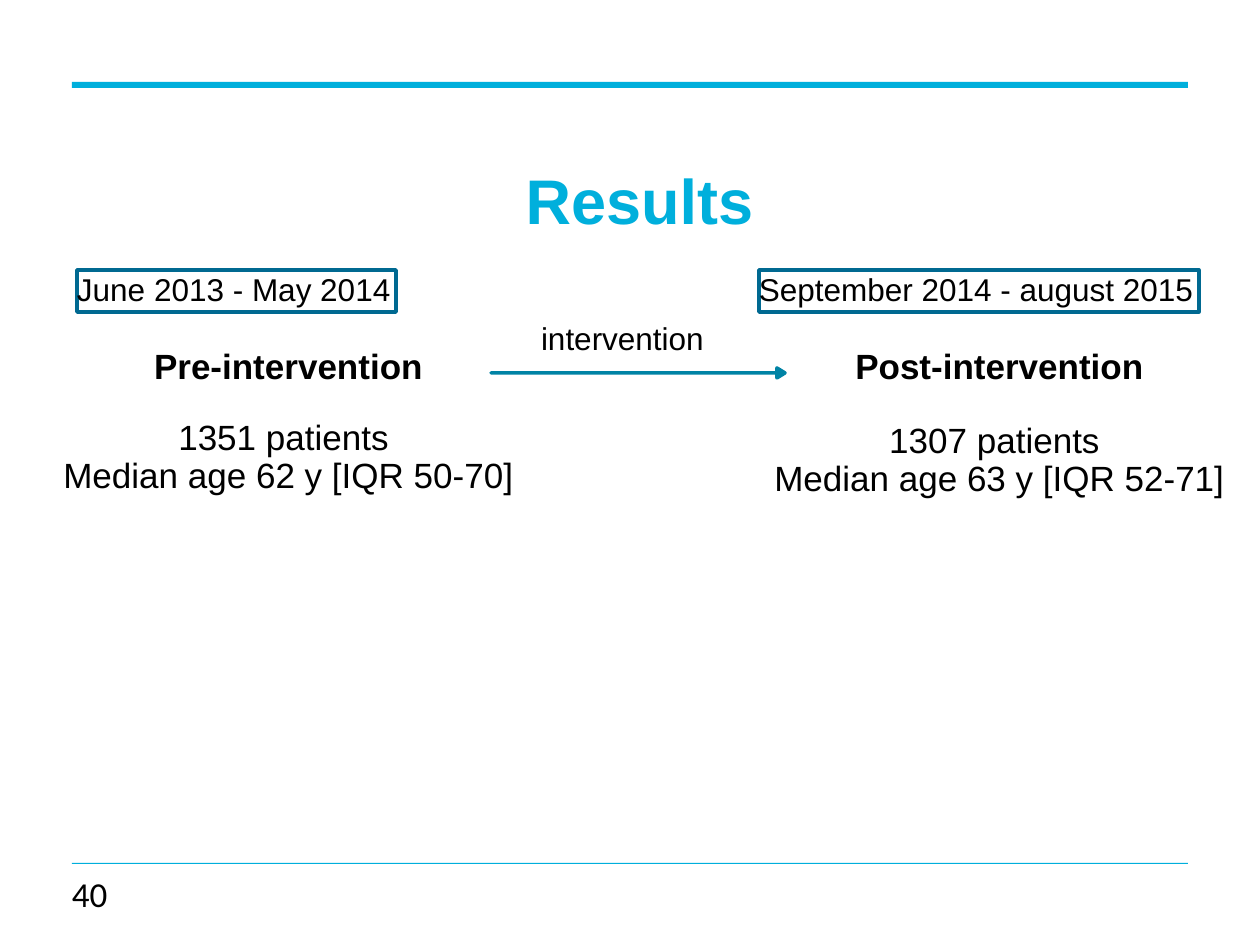
from pptx import Presentation
from pptx.dml.color import RGBColor
from pptx.enum.shapes import MSO_SHAPE
from pptx.enum.text import MSO_ANCHOR, PP_ALIGN
from pptx.util import Emu, Pt

COLORS = {"rule": "00AFDC", "arrow": "0083A5", "frame": "006991", "text": "000000"}
PX = 914400 / 126

RULES = [(72, 82, 1116, 6), (72, 863, 1116, 1)]
TITLE = ("Results", (91, 139, 1097, 131))
PERIODS = [
    ("September 2014 - august 2015", (759, 270, 440, 42)),
    ("June 2013 - May 2014", (77, 270, 319, 42)),
]
GROUPS = [
    ("Pre-intervention", ["1351 patients ", "Median age 62 y [IQR 50-70]"],
     (10, 349, 557, 348), 19),
    ("Post-intervention", ["1307 patients ", "Median age 63 y [IQR 52-71]"],
     (721, 349, 557, 149), 21),
]
ARROW = (491, 368, 294, 10)
ARROW_LABEL = ("intervention", (541, 319, 170, 39))
PAGE = ("40", (72, 852, 79, 84))


def color(name):
    return RGBColor.from_string(COLORS[name])


def place(box):
    return [Emu(round(v * PX)) for v in box]


def add_block(kind, box, fill=None, line=None):
    block = slide.shapes.add_shape(kind, *place(box))
    block.shadow.inherit = False
    if fill:
        block.fill.solid()
        block.fill.fore_color.rgb = color(fill)
    else:
        block.fill.background()
    if line:
        block.line.color.rgb = color(line)
        block.line.width = Pt(2)
    else:
        block.line.fill.background()
    return block


def write(holder, lines, size, tone="text", bold=False, font="Arial",
          align=PP_ALIGN.LEFT, anchor=MSO_ANCHOR.TOP, spacing=None):
    frame = holder.text_frame
    frame.word_wrap = True
    frame.margin_left = frame.margin_right = frame.margin_top = frame.margin_bottom = 0
    frame.vertical_anchor = anchor
    frame.text = "\n".join(lines)
    for paragraph in frame.paragraphs:
        paragraph.alignment = align
        paragraph.line_spacing = spacing
        paragraph.font.name = font
        paragraph.font.size = Pt(size)
        paragraph.font.bold = bold
        paragraph.font.color.rgb = color(tone)
    return frame.paragraphs


def add_text(box, lines, size, **style):
    return write(slide.shapes.add_textbox(*place(box)), lines, size, **style)


deck = Presentation()
deck.slide_width, deck.slide_height = place((1260, 945))
slide = deck.slides.add_slide(deck.slide_layouts[6])

for rule in RULES:
    add_block(MSO_SHAPE.RECTANGLE, rule, fill="rule")

title, title_box = TITLE
add_text(title_box, [title], 36, tone="rule", bold=True, align=PP_ALIGN.CENTER,
         anchor=MSO_ANCHOR.MIDDLE, spacing=Pt(37))

for heading, facts, box, gap in GROUPS:
    paragraphs = add_text(box, [heading, *facts], 20, align=PP_ALIGN.CENTER, spacing=0.9)
    paragraphs[0].font.bold = True
    paragraphs[1].space_before = Pt(gap)

arrow = add_block(MSO_SHAPE.RIGHT_ARROW, ARROW, fill="arrow", line="arrow")
arrow.adjustments[0] = 0
arrow.adjustments[1] = 0.81

for period, box in PERIODS:
    write(add_block(MSO_SHAPE.RECTANGLE, box, line="frame"), [period], 18)

label, label_box = ARROW_LABEL
add_text(label_box, [label], 18)

page, page_box = PAGE
add_text(page_box, [page], 20, font="Calibri", anchor=MSO_ANCHOR.MIDDLE)

deck.save("out.pptx")
